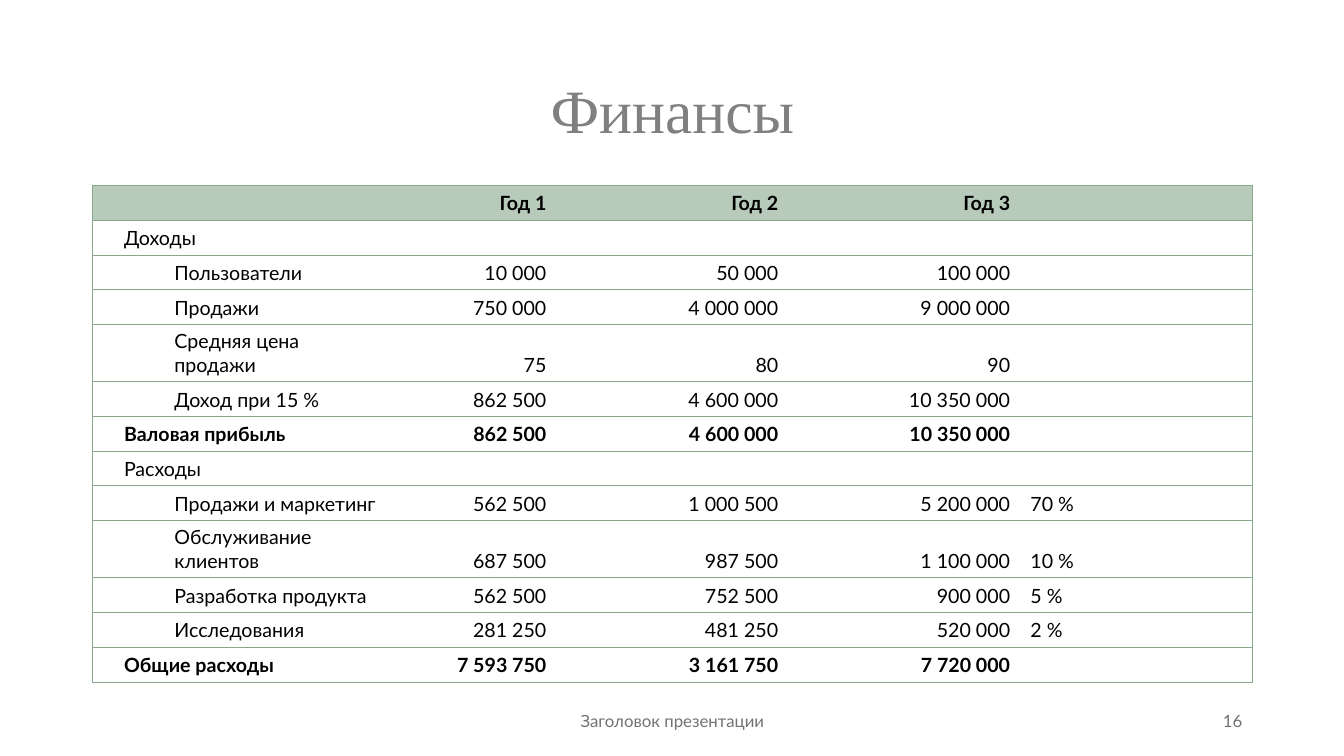
from lxml.etree import SubElement
from pptx import Presentation
from pptx.dml.color import RGBColor
from pptx.enum.text import MSO_ANCHOR as Anchor, PP_ALIGN as Align
from pptx.oxml import parse_xml
from pptx.oxml.ns import nsdecls, qn
from pptx.util import Inches, Pt

TITLE = "Финансы"
HEADER = ("", "Год 1", "Год 2", "Год 3", "")
SECTION, ITEM, TOTAL = "section", "item", "total"
FINANCES = [
    (SECTION, "Доходы", "", "", "", ""),
    (ITEM, "Пользователи", "10 000", "50 000", "100 000", ""),
    (ITEM, "Продажи", "750 000", "4 000 000", "9 000 000", ""),
    (ITEM, "Средняя цена продажи", "75", "80", "90", ""),
    (ITEM, "Доход при 15 %", "862 500", "4 600 000", "10 350 000", ""),
    (TOTAL, "Валовая прибыль", "862 500", "4 600 000", "10 350 000", ""),
    (SECTION, "Расходы", "", "", "", ""),
    (ITEM, "Продажи и маркетинг", "562 500", "1 000 500", "5 200 000", "70 %"),
    (ITEM, "Обслуживание клиентов", "687 500", "987 500", "1 100 000", "10 %"),
    (ITEM, "Разработка продукта", "562 500", "752 500", "900 000", "5 %"),
    (ITEM, "Исследования", "281 250", "481 250", "520 000", "2 %"),
    (TOTAL, "Общие расходы", "7 593 750", "3 161 750", "7 720 000", ""),
]
FOOTERS = [
    ("Заголовок презентации", 4.42, 4.5, Align.CENTER),
    ("16", 9.42, 3, Align.RIGHT),
]
COLUMN_WIDTHS = (2.99, 1.61, 2.3, 2.3, 2.3)
LEFT, WIDTH = 0.92, 11.5
BODY_FONT, TITLE_FONT = "Lato", "Times New Roman"
BLACK, TITLE_GRAY, FOOTER_GRAY = "000000", "808080", "767171"
HEADER_GREEN, BORDER_GREEN = "B8CBBB", "88A88E"


def color(value):
    return RGBColor.from_string(value)


def style(paragraph, size, face, shade, align, bold=False):
    paragraph.alignment = align
    font = paragraph.font
    font.size, font.name, font.bold = Pt(size), face, bold
    font.color.rgb = color(shade)


def set_borders(cell, sides):
    properties = cell._tc.get_or_add_tcPr()
    for position, side in enumerate("LRTB"):
        line = (f'<a:solidFill><a:srgbClr val="{BORDER_GREEN}"/></a:solidFill>'
                if side in sides else "<a:noFill/>")
        properties.insert(position, parse_xml(
            f'<a:ln{side} {nsdecls("a")} w="{Pt(0.5)}">{line}</a:ln{side}>'))


def fill_cell(cell, text, kind, column):
    cell.vertical_anchor = Anchor.BOTTOM
    paragraph = cell.text_frame.paragraphs[0]
    if text:
        paragraph.text = text
        align = Align.RIGHT if 1 <= column <= 3 else Align.LEFT
        style(paragraph, 14, BODY_FONT, BLACK, align, kind in ("header", TOTAL))
    else:
        SubElement(paragraph._p, qn("a:endParaRPr"), sz="1400")
    if column == 0 and text:
        cell.margin_left = Inches(0.31)
        if kind == ITEM:
            paragraph.level = 1
            indent = paragraph._p.get_or_add_pPr()
            indent.set("marL", str(Inches(0.5)))
            indent.set("indent", "0")
    if kind == "header":
        cell.fill.solid()
        cell.fill.fore_color.rgb = color(HEADER_GREEN)
    else:
        cell.fill.background()
    set_borders(cell, "TB" + {0: "L", len(HEADER) - 1: "R"}.get(column, ""))


def add_finances(slide):
    rows = [("header", *HEADER), *FINANCES]
    table = slide.shapes.add_table(
        len(rows), len(HEADER), Inches(LEFT), Inches(1.84),
        Inches(WIDTH), Inches(4.48)).table
    table.first_row = table.horz_banding = False
    for column, width in zip(table.columns, COLUMN_WIDTHS):
        column.width = Inches(width)
    for row, (kind, *texts) in enumerate(rows):
        for column, text in enumerate(texts):
            fill_cell(table.cell(row, column), text, kind, column)


def add_footer(slide, text, left, width, align):
    frame = slide.shapes.add_textbox(
        Inches(left), Inches(6.95), Inches(width), Inches(0.4)).text_frame
    frame.word_wrap = True
    frame.vertical_anchor = Anchor.MIDDLE
    frame.text = text
    style(frame.paragraphs[0], 12, BODY_FONT, FOOTER_GRAY, align)


def main():
    deck = Presentation()
    deck.slide_width, deck.slide_height = Inches(13.33), Inches(7.5)
    slide = deck.slides.add_slide(deck.slide_layouts[5])
    title = slide.shapes.title
    title.left, title.top = Inches(LEFT), Inches(0.4)
    title.width, title.height = Inches(WIDTH), Inches(1.45)
    title.text_frame.text = TITLE
    title.text_frame.vertical_anchor = Anchor.MIDDLE
    heading = title.text_frame.paragraphs[0]
    heading.line_spacing = 0.9
    style(heading, 44, TITLE_FONT, TITLE_GRAY, Align.CENTER)
    add_finances(slide)
    for footer in FOOTERS:
        add_footer(slide, *footer)
    deck.save("out.pptx")


if __name__ == "__main__":
    main()
